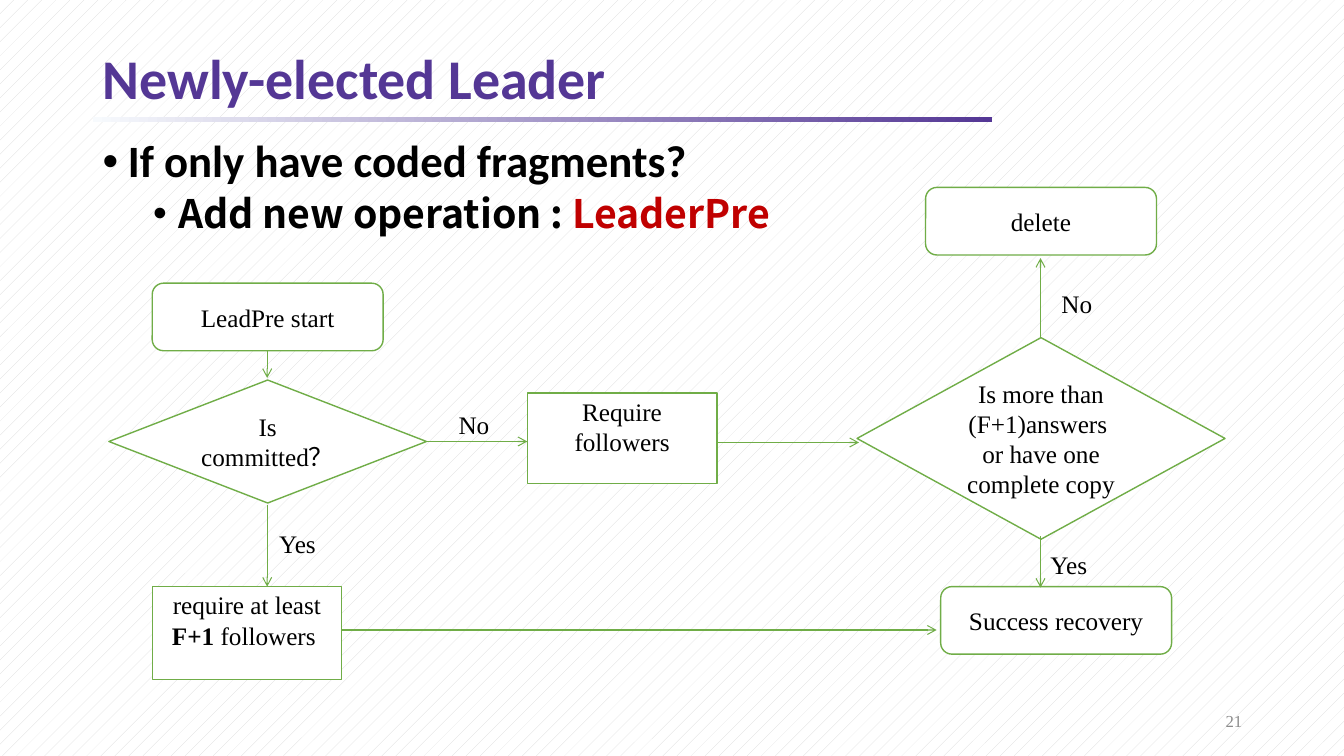
"""Build the newly-elected leader slide with its recovery flowchart."""
import dataclasses

import pptx
import pptx.dml.color
import pptx.enum.dml
import pptx.enum.shapes
import pptx.enum.text
import pptx.oxml
import pptx.oxml.ns
import pptx.util
from pptx.util import Inches

SHAPES = pptx.enum.shapes.MSO_SHAPE
ANCHORS = pptx.enum.text.MSO_ANCHOR
ALIGNS = pptx.enum.text.PP_ALIGN


@dataclasses.dataclass(frozen=True)
class Theme:
    """Colours, fonts and type sizes of the slide."""
    purple: str = "543795"
    pale: str = "F7FAFD"
    green: str = "70AD47"
    red: str = "C00000"
    black: str = "000000"
    white: str = "FFFFFF"
    grey: str = "8C8C8C"
    hatch: str = "D9D9D9"
    sans: str = "Calibri"
    wide: str = "Noto Sans CJK SC"
    serif: str = "Times New Roman"
    title: int = 40
    bullet: int = 32
    sub_bullet: int = 28
    flow: int = 18
    number: int = 12


THEME = Theme()
FLOW_NODES = [
    (SHAPES.ROUNDED_RECTANGLE, (1.51, 2.81, 2.29, 0.67), [("LeadPre start", False)]),
    (SHAPES.RECTANGLE, (5.23, 3.9, 1.88, 0.9), [("Require followers", False)]),
    (SHAPES.RECTANGLE, (1.51, 5.82, 1.88, 0.92),
     [("require at least ", False), ("F+1 ", True), ("followers ", False)]),
    (SHAPES.DIAMOND, (1.08, 3.77, 3.15, 1.22), [("Is committed？", False)]),
    (SHAPES.ROUNDED_RECTANGLE, (9.18, 1.86, 2.29, 0.67), [("delete", False)]),
    (SHAPES.DIAMOND, (8.5, 3.35, 3.65, 2),
     [("Is more than (F+1)answers  or have one complete copy", False)]),
    (SHAPES.ROUNDED_RECTANGLE, (9.33, 5.82, 2.29, 0.67), [("Success recovery", False)]),
]
FLOW_ARROWS = [
    (2.65, 3.48, 2.65, 3.75), (2.65, 5.01, 2.65, 5.82), (3.39, 6.25, 9.29, 6.25),
    (10.32, 3.35, 10.32, 2.56), (4.23, 4.38, 5.23, 4.38), (7.11, 4.39, 8.52, 4.39),
    (10.32, 5.32, 10.32, 5.83),
]
FLOW_LABELS = [("No", 4.45, 4.01), ("Yes", 2.67, 5.19), ("No", 10.43, 2.81), ("Yes", 10.32, 5.4)]


def colour(value):
    """Turn a hex string into a colour."""
    return pptx.dml.color.RGBColor.from_string(value)


def set_format(target, values):
    """Set each named attribute on the target."""
    for name, value in values.items():
        setattr(target, name, value)


def add_run(paragraph, text, font_name, size, font_colour, bold=False):
    """Append a formatted run to a paragraph."""
    run = paragraph.add_run()
    run.text = text
    set_format(run.font, {"name": font_name, "size": pptx.util.Pt(size), "bold": bold})
    run.font.color.rgb = colour(font_colour)


def add_text_box(slide, box, anchor=ANCHORS.TOP):
    """Add an empty wrapping text box and return its frame."""
    frame = slide.shapes.add_textbox(*map(Inches, box)).text_frame
    set_format(frame, {"word_wrap": True, "vertical_anchor": anchor})
    return frame


def add_background(slide):
    """Give the slide its faint pattern."""
    fill = slide.background.fill
    fill.patterned()
    fill.pattern = pptx.enum.dml.MSO_PATTERN.PERCENT_5
    fill.fore_color.rgb = colour(THEME.hatch)
    fill.back_color.rgb = colour(THEME.white)


def add_title_bar(slide):
    """Add the fading bar below the title."""
    bar = slide.shapes.add_shape(SHAPES.RECTANGLE, *map(Inches, (0.92, 1.16, 8.92, 0.05)))
    bar.shadow.inherit = False
    bar.line.fill.background()
    bar.fill.gradient()
    bar.fill.gradient_angle = 0
    for stop, position, value in zip(bar.fill.gradient_stops, (0, 1), (THEME.pale, THEME.purple)):
        stop.position = position
        stop.color.rgb = colour(value)


def add_title(slide, text):
    """Place and format the title placeholder."""
    title = slide.shapes.title
    set_format(title, {"left": Inches(0.92), "top": Inches(0.43),
                       "width": Inches(11.5), "height": Inches(0.75)})
    title.text_frame.vertical_anchor = ANCHORS.MIDDLE
    paragraph = title.text_frame.paragraphs[0]
    set_format(paragraph, {"alignment": ALIGNS.LEFT, "line_spacing": 0.9})
    add_run(paragraph, text, THEME.sans, THEME.title, THEME.purple, True)


def format_bullet(paragraph, level, indent, space):
    """Make a paragraph a bulleted one."""
    properties = paragraph._p.get_or_add_pPr()
    properties.set("marL", str(Inches(indent)))
    properties.set("indent", str(Inches(-0.25)))
    namespace = pptx.oxml.ns.nsdecls("a")
    properties.append(pptx.oxml.parse_xml(f'<a:buFont {namespace} typeface="Arial"/>'))
    properties.append(pptx.oxml.parse_xml(f'<a:buChar {namespace} char="•"/>'))
    set_format(paragraph, {"level": level, "line_spacing": 0.9,
                           "space_before": pptx.util.Pt(space)})


def add_bullets(slide):
    """Add the question and the operation that answers it."""
    frame = add_text_box(slide, (0.92, 1.33, 11.5, 1.15))
    question = frame.paragraphs[0]
    format_bullet(question, 0, 0.25, 0)
    add_run(question, "If only have coded fragments?", THEME.sans, THEME.bullet, THEME.black, True)
    operation = frame.add_paragraph()
    format_bullet(operation, 1, 0.75, 5)
    for text, value in (("Add new operation : ", THEME.black), ("LeaderPre", THEME.red)):
        add_run(operation, text, THEME.wide, THEME.sub_bullet, value, True)


def add_node(slide, kind, box, runs):
    """Add one outlined flowchart node."""
    node = slide.shapes.add_shape(kind, *map(Inches, box))
    node.shadow.inherit = False
    node.fill.solid()
    node.fill.fore_color.rgb = colour(THEME.white)
    node.line.color.rgb = colour(THEME.green)
    node.line.width = pptx.util.Pt(1)
    frame = node.text_frame
    set_format(frame, {"word_wrap": True, "vertical_anchor": ANCHORS.MIDDLE})
    if kind == SHAPES.RECTANGLE:
        set_format(frame, {"vertical_anchor": ANCHORS.TOP, "margin_top": Inches(0.03)})
    paragraph = frame.paragraphs[0]
    paragraph.alignment = ALIGNS.CENTER
    for text, bold in runs:
        add_run(paragraph, text, THEME.serif, THEME.flow, THEME.black, bold)


def add_arrow(slide, ends):
    """Add a thin connector with an open arrowhead at its end."""
    arrow = slide.shapes.add_connector(
        pptx.enum.shapes.MSO_CONNECTOR.STRAIGHT, *map(Inches, ends))
    arrow.line.color.rgb = colour(THEME.green)
    arrow.line.width = pptx.util.Pt(0.75)
    namespace = pptx.oxml.ns.nsdecls("a")
    arrow.line._get_or_add_ln().append(
        pptx.oxml.parse_xml(f'<a:tailEnd {namespace} type="arrow"/>'))
    arrow._element.spPr.append(pptx.oxml.parse_xml(f"<a:effectLst {namespace}/>"))


def add_label(slide, text, left, top):
    """Add a branch label beside an arrow."""
    frame = add_text_box(slide, (left, top, 0.63, 0.4))
    add_run(frame.paragraphs[0], text, THEME.serif, THEME.flow, THEME.black)


def add_slide_number(slide, text):
    """Add the slide number at the lower right."""
    paragraph = add_text_box(slide, (9.42, 6.95, 3, 0.4), ANCHORS.MIDDLE).paragraphs[0]
    paragraph.alignment = ALIGNS.RIGHT
    add_run(paragraph, text, THEME.serif, THEME.number, THEME.grey)


def main():
    """Build and save the presentation."""
    presentation = pptx.Presentation()
    set_format(presentation, {"slide_width": Inches(13.33), "slide_height": Inches(7.5)})
    slide = presentation.slides.add_slide(presentation.slide_layouts[5])
    add_background(slide)
    add_title_bar(slide)
    add_slide_number(slide, "21")
    add_title(slide, "Newly-elected Leader")
    add_bullets(slide)
    for node in FLOW_NODES:
        add_node(slide, *node)
    for ends in FLOW_ARROWS:
        add_arrow(slide, ends)
    for label in FLOW_LABELS:
        add_label(slide, *label)
    presentation.save("out.pptx")


if __name__ == "__main__":
    main()
